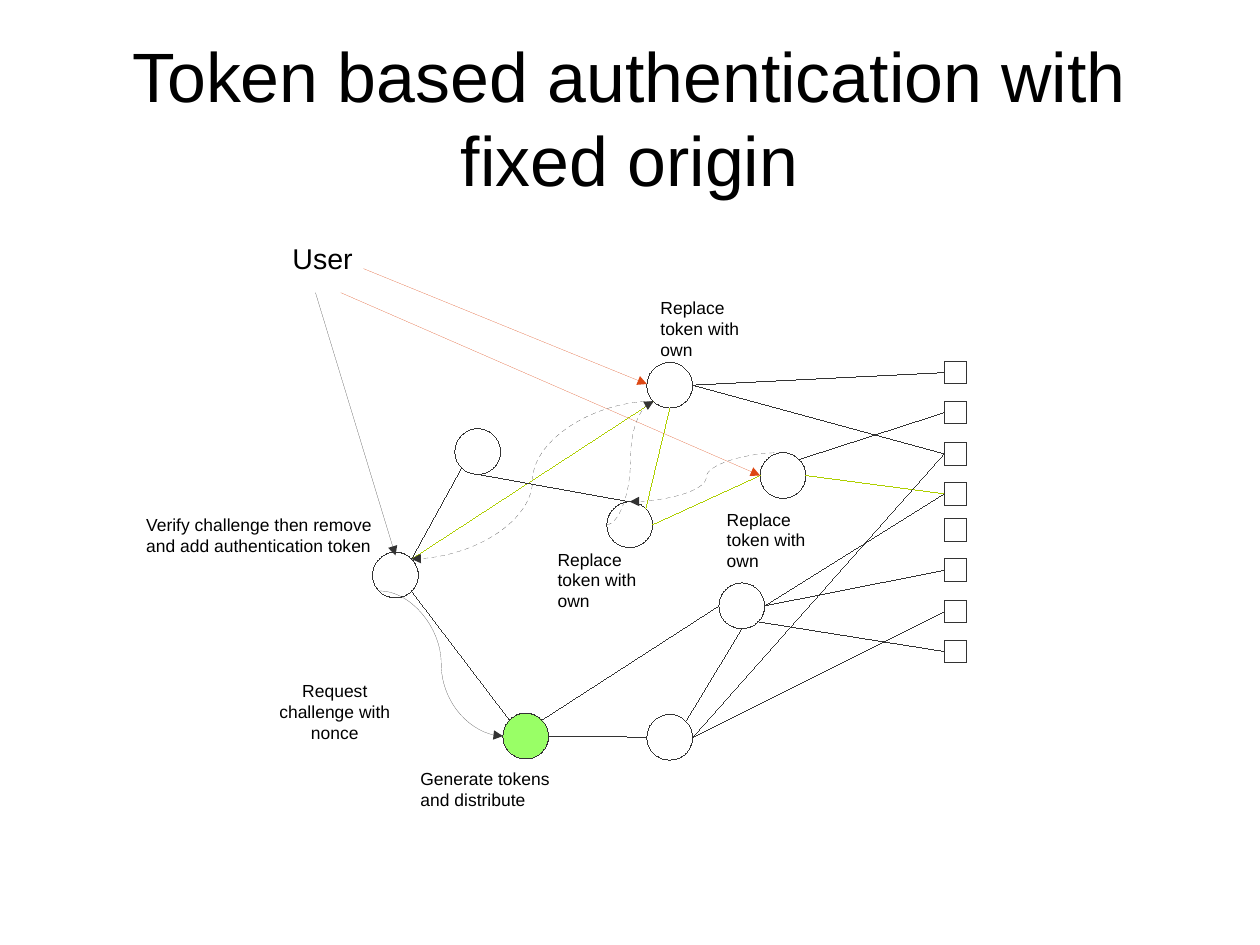
from pptx import Presentation
from pptx.dml.color import RGBColor
from pptx.enum.dml import MSO_LINE
from pptx.enum.shapes import MSO_CONNECTOR, MSO_SHAPE
from pptx.enum.text import MSO_ANCHOR, PP_ALIGN
from pptx.oxml.ns import qn
from pptx.util import Cm, Inches, Pt
from lxml import etree

STRAIGHT, CURVE = MSO_CONNECTOR.STRAIGHT, MSO_CONNECTOR.CURVE
OVAL, RECT = MSO_SHAPE.OVAL, MSO_SHAPE.RECTANGLE
LEFT, CENTER = PP_ALIGN.LEFT, PP_ALIGN.CENTER
DASH = MSO_LINE.DASH

FONT = "Arial"
BLACK, DARK, LIME, GREEN, ORANGE = "000000", "333333", "AECF00", "99FF66", "DD4814"
TITLE = "Token based authentication with fixed origin"
REPLACE = "Replace  token with own"

# Text, left, top, width, height, size, alignment
LABELS = [
    ("User", 2.46, 2.06, 0.75, 0.38, 18, LEFT),
    ("Request challenge with nonce", 2.26, 5.9, 1.34, 0.79, 11, CENTER),
    ("Generate tokens and distribute", 3.58, 6.67, 1.5, 0.45, 11, LEFT),
    ("Verify challenge then remove and add authentication token",
     1.18, 4.45, 2.25, 0.65, 11, LEFT),
    (REPLACE, 4.78, 4.75, 1, 0.62, 11, LEFT),
    (REPLACE, 6.26, 4.4, 1.02, 0.65, 11, LEFT),
    (REPLACE, 5.68, 2.55, 1, 0.62, 11, LEFT),
]

# Circle centres
NODES = {
    "verifier": (3.46, 5.03), "relay": (5.51, 4.59), "upper": (4.18, 3.95),
    "gateway": (6.49, 5.3), "top": (5.86, 3.37), "right": (6.85, 4.16),
    "origin": (4.6, 6.44), "lower": (5.86, 6.45),
}
RADIUS, DIAGONAL = 0.2, 0.14
SITES = {
    "N": (0, -RADIUS), "S": (0, RADIUS), "W": (-RADIUS, 0), "E": (RADIUS, 0),
    "NW": (-DIAGONAL, -DIAGONAL), "NE": (DIAGONAL, -DIAGONAL),
    "SW": (-DIAGONAL, DIAGONAL), "SE": (DIAGONAL, DIAGONAL),
}

# Two groups of four server boxes
BOX_X, BOX = 8.26, 0.2
BOX_TOPS = [start + step for start in (3.16, 4.54) for step in (0, 0.35, 0.71, 1.06)]

# An end is "node site", a box number, or a free point
LINKS = [
    ("verifier SE", "origin NW", DARK), ("verifier NE", "top SW", LIME),
    ("relay NE", "top S", LIME), ("origin NE", "gateway W", DARK),
    ("upper S", "relay N", DARK), ("relay E", "right W", LIME),
    ("top E", 0, DARK), ("top E", 2, DARK),
    ("right E", 3, LIME), ("right NE", 1, DARK),
    ("origin E", "lower W", DARK), ("lower NE", "gateway S", DARK),
    ("gateway E", 3, DARK), ("gateway E", 5, DARK),
    ("lower E", 6, DARK), ("lower E", 2, DARK),
    ("verifier NE", "upper SW", DARK), ("gateway SE", 7, DARK),
]
ARROWS = [
    ((2.76, 2.56), (3.46, 4.86), DARK),
    ((3.18, 2.35), (5.66, 3.36), ORANGE),
    ((2.98, 2.56), "right W", ORANGE),
]
# Start, end, dash
CURVES = [
    ("verifier SW", "origin W", None), ("top SW", "verifier NE", DASH),
    ("relay W", "top SW", DASH), ("right N", "relay N", DASH),
]


def rgb(color):
    return RGBColor.from_string(color)


def drop_style(shape):
    """Remove theme styling, so that the line is a hairline without shadow."""
    shape._element.remove(shape._element.find(qn("p:style")))


def set_text(tf, text, size, align):
    tf.word_wrap = True
    tf.text = text
    p = tf.paragraphs[0]
    p.alignment = align
    p.font.name, p.font.size = FONT, Pt(size)
    p.font.color.rgb = rgb(BLACK)


def add_outline(s, kind, x, y, size, fill=None):
    sp = s.shapes.add_shape(kind, *map(Inches, (x, y, size, size)))
    sp.shadow.inherit = False
    drop_style(sp)
    if fill:
        sp.fill.solid()
        sp.fill.fore_color.rgb = rgb(fill)
    else:
        sp.fill.background()
    sp.line.color.rgb = rgb(DARK)


def locate(end):
    """Turn a link end into slide coordinates."""
    if isinstance(end, tuple):
        return end
    if isinstance(end, int):
        return BOX_X, BOX_TOPS[end] + BOX / 2
    node, site = end.split()
    return tuple(c + d for c, d in zip(NODES[node], SITES[site]))


def link(s, start, end, color, kind=STRAIGHT, arrow=False, dash=None):
    points = locate(start) + locate(end)
    c = s.shapes.add_connector(kind, *map(Inches, points))
    drop_style(c)
    c.line.color.rgb = rgb(color)
    if dash:
        c.line.dash_style = dash
    if arrow:
        etree.SubElement(c.line._get_or_add_ln(), qn("a:tailEnd"), type="triangle")
    etree.SubElement(c._element.spPr, qn("a:effectLst"))


def main():
    prs = Presentation()
    prs.slide_width, prs.slide_height = Cm(28), Cm(21)
    s = prs.slides.add_slide(prs.slide_layouts[5])

    title = s.shapes.title
    title.left, title.top = Inches(0.55), Inches(0.33)
    title.width, title.height = Inches(9.92), Inches(1.38)
    tf = title.text_frame
    tf.margin_left = tf.margin_right = tf.margin_top = tf.margin_bottom = 0
    tf.vertical_anchor = MSO_ANCHOR.MIDDLE
    set_text(tf, TITLE, 44, CENTER)

    for name, (x, y) in NODES.items():
        fill = GREEN if name == "origin" else None
        add_outline(s, OVAL, x - RADIUS, y - RADIUS, 2 * RADIUS, fill)
    for top in BOX_TOPS:
        add_outline(s, RECT, BOX_X, top, BOX)

    for start, end, color in LINKS:
        link(s, start, end, color)
    for start, end, color in ARROWS:
        link(s, start, end, color, arrow=True)
    for start, end, dash in CURVES:
        link(s, start, end, DARK, CURVE, arrow=True, dash=dash)

    for text, x, y, w, h, size, align in LABELS:
        box = s.shapes.add_textbox(*map(Inches, (x, y, w, h)))
        set_text(box.text_frame, text, size, align)

    prs.save("out.pptx")


if __name__ == "__main__":
    main()
